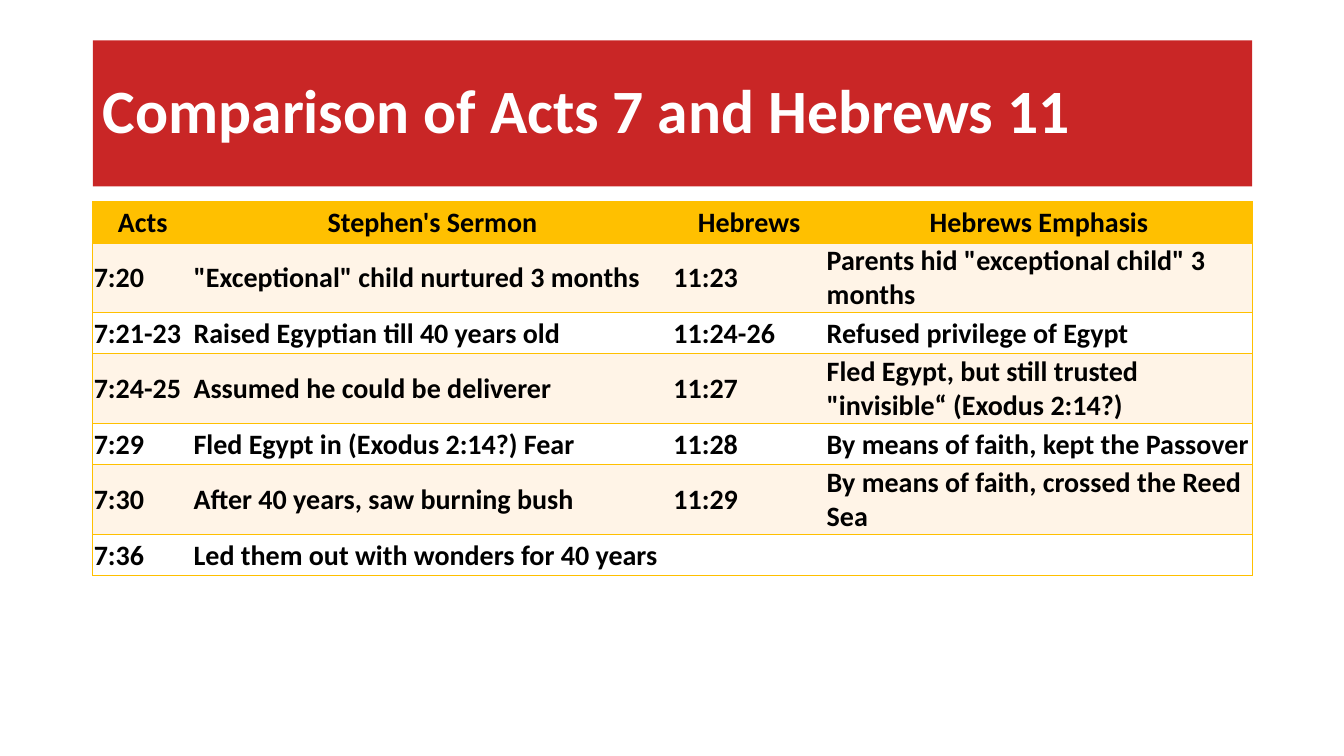
from dataclasses import dataclass

from lxml.etree import SubElement
from pptx import Presentation
from pptx.dml.color import RGBColor
from pptx.enum.text import MSO_ANCHOR as Anchor, MSO_AUTO_SIZE as AutoSize, PP_ALIGN as Align
from pptx.oxml import parse_xml
from pptx.oxml.ns import nsdecls, qn
from pptx.util import Inches, Pt


@dataclass(frozen=True)
class Theme:
    font: str = "Calibri"
    title_size: int = 44
    table_size: int = 20
    banner: str = "C00000"
    banner_opacity: int = 85
    gold: str = "FFC000"
    cream: str = "FFF4E7"
    white: str = "FFFFFF"
    black: str = "000000"
    border_width: int = 1


THEME = Theme()
LEFT, WIDTH = Inches(0.92), Inches(11.5)
COLUMN_WIDTHS = (0.99, 4.76, 1.52, 4.23)
ROW_HEIGHT = 0.41
COMPARISON = (
    ("Acts", "Stephen's Sermon", "Hebrews", "Hebrews Emphasis"),
    ("7:20", "\"Exceptional\" child nurtured 3 months", "11:23",
     "Parents hid \"exceptional child\" 3 months"),
    ("7:21-23", "Raised Egyptian till 40 years old", "11:24-26", "Refused privilege of Egypt"),
    ("7:24-25", "Assumed he could be deliverer", "11:27",
     "Fled Egypt, but still trusted \"invisible“ (Exodus 2:14?)"),
    ("7:29", "Fled Egypt in (Exodus 2:14?) Fear", "11:28", "By means of faith, kept the Passover"),
    ("7:30", "After 40 years, saw burning bush", "11:29", "By means of faith, crossed the Reed Sea"),
    ("7:36", "Led them out with wonders for 40 years", "", ""),
)


def set_fill(target, color):
    target.fill.solid()
    target.fill.fore_color.rgb = RGBColor.from_string(color)


def style_font(font, size, color):
    font.name = THEME.font
    font.size = Pt(size)
    font.bold = True
    font.color.rgb = RGBColor.from_string(color)


def add_title(slide, text):
    title = slide.shapes.title
    title.left, title.top, title.width, title.height = LEFT, Inches(0.4), WIDTH, Inches(1.45)
    set_fill(title, THEME.banner)
    color = title.fill._xPr.find(qn("a:solidFill"))[0]
    SubElement(color, qn("a:alpha"), val=str(THEME.banner_opacity * 1000))

    frame = title.text_frame
    frame.auto_size = AutoSize.NONE
    frame.word_wrap = True
    frame.vertical_anchor = Anchor.MIDDLE
    paragraph = frame.paragraphs[0]
    paragraph.alignment = Align.LEFT
    paragraph.line_spacing = 0.9
    run = paragraph.add_run()
    run.text = text
    style_font(run.font, THEME.title_size, THEME.white)


def set_borders(cell, visible_sides):
    """Draw gold lines on the visible sides and hide the other ones."""
    properties = cell._tc.get_or_add_tcPr()
    for position, side in enumerate("LRTB"):
        paint = "<a:noFill/>"
        if side in visible_sides:
            paint = f'<a:solidFill><a:srgbClr val="{THEME.gold}"/></a:solidFill>'
        line = f'<a:ln{side} {nsdecls("a")} w="{Pt(THEME.border_width)}">{paint}</a:ln{side}>'
        properties.insert(position, parse_xml(line))


def fill_cell(cell, text, background, alignment):
    cell.margin_left = cell.margin_right = cell.margin_top = Inches(0.01)
    cell.margin_bottom = 0
    cell.vertical_anchor = Anchor.MIDDLE
    set_fill(cell, background)
    paragraph = cell.text_frame.paragraphs[0]
    paragraph.alignment = alignment
    if text:
        run = paragraph.add_run()
        run.text = text
        style_font(run.font, THEME.table_size, THEME.black)


def add_comparison_table(slide, rows):
    table = slide.shapes.add_table(
        len(rows), len(COLUMN_WIDTHS), LEFT, Inches(2), WIDTH, Inches(ROW_HEIGHT * len(rows))
    ).table
    for column, width in zip(table.columns, COLUMN_WIDTHS):
        column.width = Inches(width)
    last_column = len(COLUMN_WIDTHS) - 1
    for row_index, texts in enumerate(rows):
        table.rows[row_index].height = Inches(ROW_HEIGHT)
        is_header = row_index == 0
        band = THEME.cream if row_index % 2 else THEME.white
        for column_index, text in enumerate(texts):
            cell = table.cell(row_index, column_index)
            fill_cell(cell, text, THEME.gold if is_header else band,
                      Align.CENTER if is_header else Align.LEFT)
            outer_side = {0: "L", last_column: "R"}.get(column_index, "")
            set_borders(cell, "TB" + outer_side)


def main():
    deck = Presentation()
    deck.slide_width, deck.slide_height = Inches(13.33), Inches(7.5)
    slide = deck.slides.add_slide(deck.slide_layouts.get_by_name("Title Only"))
    add_title(slide, "Comparison of Acts 7 and Hebrews 11")
    add_comparison_table(slide, COMPARISON)
    deck.save("out.pptx")


if __name__ == "__main__":
    main()
